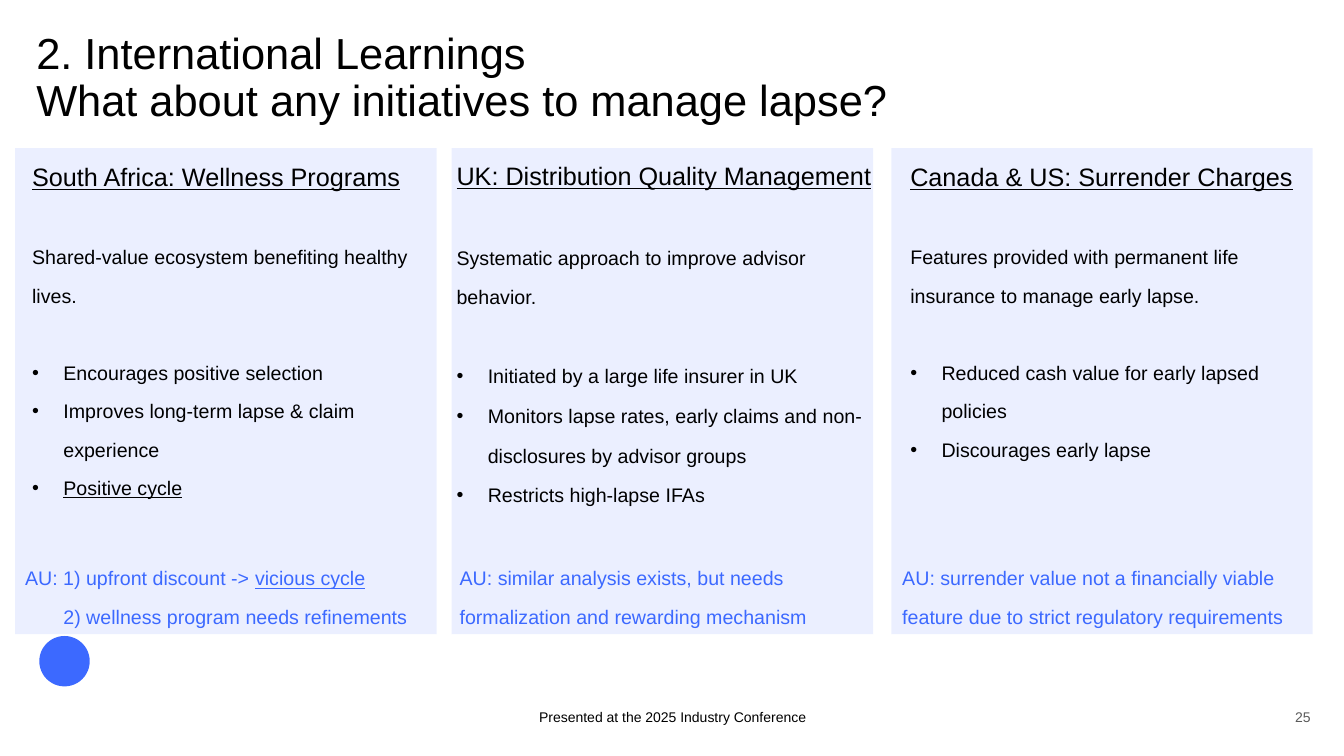
from dataclasses import dataclass

from lxml.etree import SubElement
from pptx import Presentation
from pptx.dml.color import RGBColor
from pptx.enum.shapes import MSO_SHAPE
from pptx.enum.text import MSO_ANCHOR, PP_ALIGN
from pptx.oxml.ns import qn
from pptx.util import Inches, Pt


@dataclass(frozen=True)
class Theme:
    font: str = "Arial"
    black: str = "000000"
    grey: str = "5B5B5B"
    blue: str = "3C69FF"
    card: str = "D8E1FF"
    title: float = 31
    heading: float = 18
    body: float = 14
    footer: float = 10
    leading: float = 27.5


@dataclass(frozen=True)
class Run:
    text: str
    underline: bool = False


@dataclass(frozen=True)
class Para:
    runs: tuple[Run, ...]
    indent: float = 0


@dataclass(frozen=True)
class Column:
    card_x: float
    body_x: float
    body_y: float
    note_x: float
    text_w: float
    leading: float
    heading: str
    summary: str
    bullets: tuple[Run, ...]
    note: tuple[Para, ...]


THEME = Theme()
CARD_Y, CARD_W, CARD_H = 1.47, 4.18, 4.82
NOTE_Y, NOTE_H = 5.42, 1.12
BODY_H = 3.6
BULLET_INDENT = 0.31

COLUMNS = (
    Column(0.15, 0.22, 1.47, 0.15, 4.18, 27.5,
           "South Africa: Wellness Programs",
           "Shared-value ecosystem benefiting healthy lives.",
           (Run("Encourages positive selection"),
            Run("Improves long-term lapse & claim experience"),
            Run("Positive cycle", True)),
           (Para((Run("AU: 1) upfront discount -> "), Run("vicious cycle", True))),
            Para((Run("2) wellness program needs refinements"),), 0.38))),
    Column(4.48, 4.43, 1.46, 4.46, 4.32, 28.5,
           "UK: Distribution Quality Management",
           "Systematic approach to improve advisor behavior.",
           (Run("Initiated by a large life insurer in UK"),
            Run("Monitors lapse rates, early claims and non-disclosures by advisor groups"),
            Run("Restricts high-lapse IFAs")),
           (Para((Run("AU: similar analysis exists, but needs formalization "
                      "and rewarding mechanism"),)),)),
    Column(8.84, 8.93, 1.47, 8.85, 4.18, 27.5,
           "Canada & US: Surrender Charges",
           "Features provided with permanent life insurance to manage early lapse.",
           (Run("Reduced cash value for early lapsed policies"),
            Run("Discourages early lapse")),
           (Para((Run("AU: surrender value not a financially viable feature "
                      "due to strict regulatory requirements"),)),)),
)


def add_text_frame(s, x: float, y: float, w: float, h: float, inset: bool = True):
    tf = s.shapes.add_textbox(Inches(x), Inches(y), Inches(w), Inches(h)).text_frame
    tf.word_wrap = True
    if not inset:
        tf.margin_left = tf.margin_right = tf.margin_top = tf.margin_bottom = 0
    return tf


def add_run(p, run: Run, size: float, color: str) -> None:
    r = p.add_run()
    r.text = run.text
    r.font.name = THEME.font
    r.font.size = Pt(size)
    r.font.color.rgb = RGBColor.from_string(color)
    if run.underline:
        r.font.underline = True


def next_paragraph(tf, leading: float, gap: float = 0):
    first = tf.paragraphs[0]
    p = tf.add_paragraph() if first.runs else first
    p.line_spacing = Pt(leading)
    p.space_before = Pt(gap)
    return p


def set_indent(p, left: float, first: float = 0) -> None:
    pPr = p._p.get_or_add_pPr()
    pPr.set("marL", str(Inches(left)))
    pPr.set("indent", str(Inches(first)))


def set_bullet(p) -> None:
    set_indent(p, BULLET_INDENT, -BULLET_INDENT)
    pPr = p._p.get_or_add_pPr()
    SubElement(SubElement(pPr, qn("a:buClr")), qn("a:srgbClr"), val=THEME.black)
    SubElement(pPr, qn("a:buFont"), typeface=THEME.font)
    SubElement(pPr, qn("a:buChar"), char="•")


def add_filled(s, kind, x: float, y: float, w: float, h: float, color: str):
    sp = s.shapes.add_shape(kind, Inches(x), Inches(y), Inches(w), Inches(h))
    sp.shadow.inherit = False
    sp.fill.solid()
    sp.fill.fore_color.rgb = RGBColor.from_string(color)
    sp.line.fill.background()
    return sp


def add_column(s, col: Column) -> None:
    # Half-transparent card
    card = add_filled(s, MSO_SHAPE.RECTANGLE, col.card_x, CARD_Y, CARD_W, CARD_H, THEME.card)
    clr = card._element.spPr.find(qn("a:solidFill")).find(qn("a:srgbClr"))
    SubElement(clr, qn("a:alpha"), val="50000")

    # Heading, summary and bullets
    tf = add_text_frame(s, col.body_x, col.body_y, col.text_w, BODY_H)
    p = next_paragraph(tf, THEME.leading)
    add_run(p, Run(col.heading, True), THEME.heading, THEME.black)
    p = next_paragraph(tf, col.leading, THEME.leading)
    add_run(p, Run(col.summary), THEME.body, THEME.black)
    for i, bullet in enumerate(col.bullets):
        p = next_paragraph(tf, col.leading, 0 if i else THEME.leading)
        set_bullet(p)
        add_run(p, bullet, THEME.body, THEME.black)

    # Australian comparison
    tf = add_text_frame(s, col.note_x, NOTE_Y, col.text_w, NOTE_H)
    for para in col.note:
        p = next_paragraph(tf, THEME.leading)
        set_indent(p, para.indent)
        for run in para.runs:
            add_run(p, run, THEME.body, THEME.blue)


def add_footer(s, x: float, w: float, text: str, align: PP_ALIGN, color: str) -> None:
    tf = add_text_frame(s, x, 7, w, 0.2, inset=False)
    tf.vertical_anchor = MSO_ANCHOR.BOTTOM
    p = tf.paragraphs[0]
    p.alignment = align
    add_run(p, Run(text), THEME.footer, color)


def main() -> None:
    prs = Presentation()
    prs.slide_width, prs.slide_height = Inches(13.33), Inches(7.5)
    s = prs.slides.add_slide(prs.slide_layouts[6])

    # Plain emblem
    add_filled(s, MSO_SHAPE.OVAL, 0.39, 6.31, 0.5, 0.5, THEME.blue)

    # Title
    p = add_text_frame(s, 0.36, 0.32, 12.18, 1.09, inset=False).paragraphs[0]
    p.line_spacing = 0.9
    add_run(p, Run("2. International Learnings"), THEME.title, THEME.black)
    p.add_line_break()
    add_run(p, Run("What about any initiatives to manage lapse?"), THEME.title, THEME.black)

    # Footer
    add_footer(s, 12.54, 0.46, "25", PP_ALIGN.RIGHT, THEME.grey)
    add_footer(s, 4.42, 4.5, "Presented at the 2025 Industry Conference",
               PP_ALIGN.CENTER, THEME.black)

    # Country columns
    for col in COLUMNS:
        add_column(s, col)

    prs.save("out.pptx")


if __name__ == "__main__":
    main()
